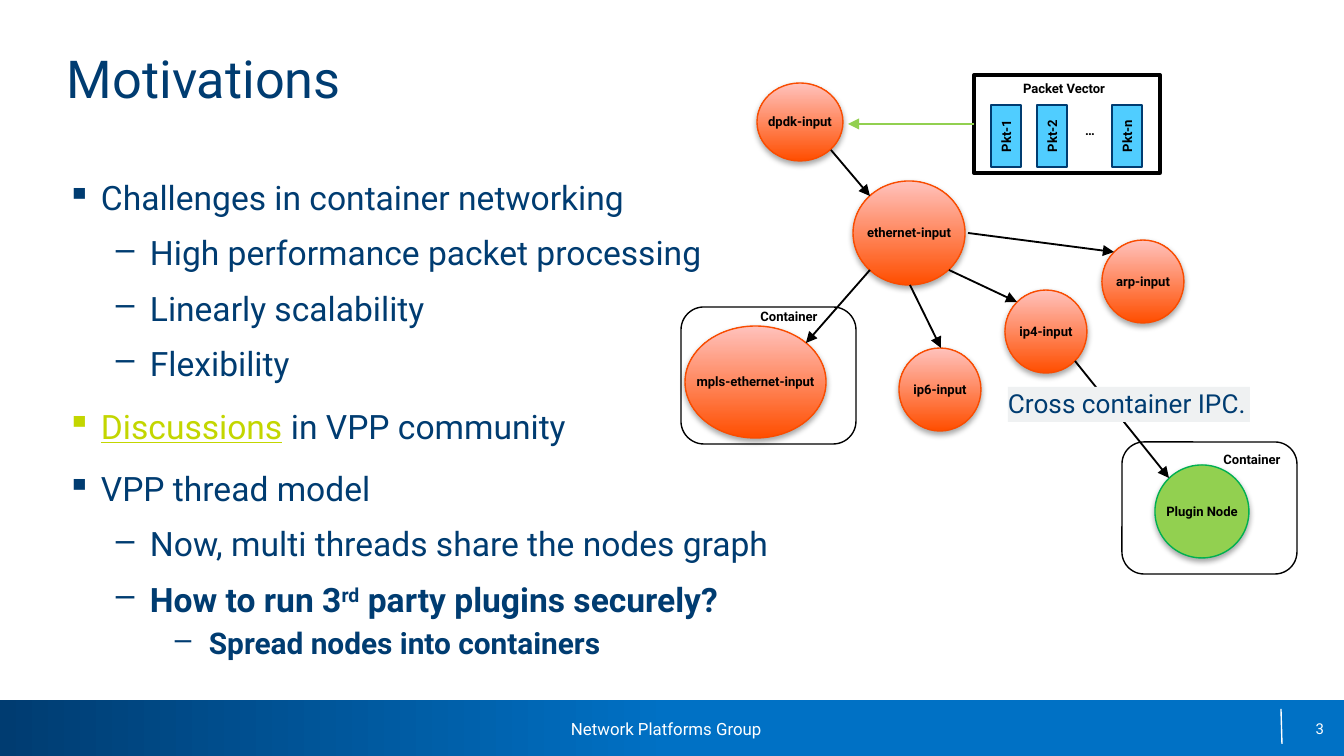
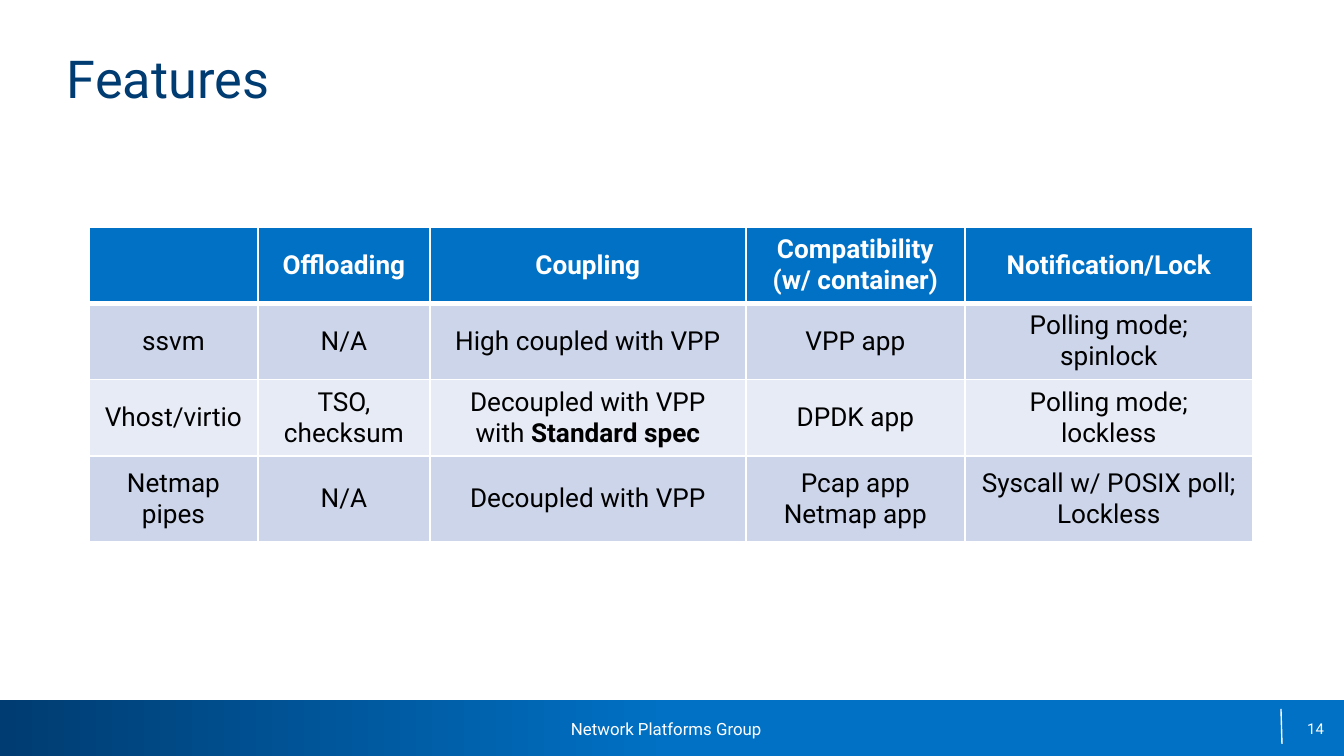
from pptx import Presentation
from pptx.dml.color import RGBColor
from pptx.enum.shapes import MSO_CONNECTOR, MSO_SHAPE
from pptx.enum.text import MSO_ANCHOR, MSO_AUTO_SIZE, PP_ALIGN
from pptx.oxml.ns import qn
from pptx.util import Emu, Pt
from lxml import etree

RECT, ROUND, OVAL = MSO_SHAPE.RECTANGLE, MSO_SHAPE.ROUNDED_RECTANGLE, MSO_SHAPE.OVAL
STRAIGHT = MSO_CONNECTOR.STRAIGHT
LEFT, CENTER, RIGHT = PP_ALIGN.LEFT, PP_ALIGN.CENTER, PP_ALIGN.RIGHT
TOP, MIDDLE = MSO_ANCHOR.TOP, MSO_ANCHOR.MIDDLE
GROW = MSO_AUTO_SIZE.SHAPE_TO_FIT_TEXT

SCALE = 914400 / 134.4
WIDE, HIGH = 1344, 756
NAVY, BLUE, WHITE, BLACK = "003C71", "0071C5", "FFFFFF", "000000"
LIME, GREEN, SKY, PALE = "C3D600", "92D050", "50CDFF", "EFF1F2"
BANDS = ["CCD5EA", "E7EBF5"]
FLAME = [(0, "FF4E00"), (1, "FFC2BD")]
FADE = [(0, NAVY), (0.5, BLUE)]


def style(size, hue, bold=False):
    return {"name": "Roboto", "size": Pt(size), "hue": hue, "bold": bold}


HEAD, BODY = style(28, NAVY), style(18, NAVY)
SMALL = style(7, BLACK, True)

# Bullet levels: indent in px, mark, space before in points
LEVELS = [(34, "▪", 12), (83, "–", 8), (142, "–", 3)]
HANG = 34
POINTS = [
    (0, "Challenges in container networking"),
    (1, "High performance packet processing"),
    (1, "Linearly scalability"),
    (1, "Flexibility"),
    (0, [("Discussions", {"hue": LIME, "underline": True}),
         (" in VPP community", {})]),
    (0, "VPP thread model"),
    (1, "Now, multi threads share the nodes graph"),
    (1, [("How to run 3", {"bold": True}),
         ("rd", {"bold": True, "base": 30000}),
         (" party plugins securely?", {"bold": True})]),
    (2, [("Spread nodes into containers", {"bold": True, "size": Pt(16)})]),
]

# Graph nodes: name, ellipse box, label width
NODES = [
    ("dpdk-input", (757, 83, 86, 78), 97),
    ("ethernet-input", (853, 181, 112, 104), 118),
    ("ip6-input", (899, 348, 82, 83), 85),
    ("ip4-input", (1005, 290, 82, 83), 85),
    ("arp-input", (1102, 240, 82, 83), 86),
    ("mpls-ethernet-input", (685, 326, 141, 112), 145),
]
EDGES = [
    (831, 150, 870, 196), (910, 285, 941, 348), (949, 270, 1017, 302),
    (968, 233, 1114, 252), (870, 270, 806, 343),
]

COLS = [169, 172, 316, 219, 288]
ROWS = [70, 70, 70, 86]
GRID = [
    ["", "Offloading", "Coupling", "Compatibility\n(w/ container)",
     "Notification/Lock"],
    ["ssvm", "N/A", "High coupled with VPP", "VPP app",
     "Polling mode;\nspinlock"],
    ["Vhost/virtio", "TSO,\nchecksum",
     [("Decoupled with VPP with ", {}), ("Standard spec", {"bold": True})],
     "DPDK app", "Polling mode;\nlockless"],
    ["Netmap pipes", "N/A", "Decoupled with VPP", "Pcap app\nNetmap app",
     "Syscall w/ POSIX poll;\nLockless"],
]


def px(num):
    return Emu(round(num * SCALE))


def box(nums):
    return [px(num) for num in nums]


def tone(code):
    return RGBColor.from_string(code)


def node(parent, tag, **attrs):
    return etree.SubElement(parent, qn(tag), attrs)


# Text
def dress(font, form):
    for key, val in form.items():
        if key == "hue":
            font.color.rgb = tone(val)
        elif key == "base":
            font._rPr.set("baseline", str(val))
        else:
            setattr(font, key, val)


def write(frame, lines, form, align=LEFT):
    for num, line in enumerate(lines):
        para = frame.add_paragraph() if num else frame.paragraphs[0]
        para.alignment = align
        runs = [(line, {})] if isinstance(line, str) else line
        for words, extra in runs:
            run = para.add_run()
            run.text = words
            dress(run.font, {**form, **extra})


def trim(frame, anchor=TOP):
    form = {"margin_left": 0, "margin_top": 0, "margin_right": 0,
            "margin_bottom": 0, "word_wrap": True, "vertical_anchor": anchor}
    for key, val in form.items():
        setattr(frame, key, val)


def text(slide, area, lines, form, align=LEFT, anchor=TOP):
    frame = slide.shapes.add_textbox(*box(area)).text_frame
    trim(frame, anchor)
    write(frame, lines, form, align)
    return frame


def label(slide, mid, top, width, words):
    area = (mid - width / 2, top, width, 30)
    frame = slide.shapes.add_textbox(*box(area)).text_frame
    frame.word_wrap = False
    frame.auto_size = GROW
    write(frame, [words], SMALL, CENTER)


def bullets(slide, area, points):
    frame = text(slide, area, [line for _, line in points], BODY)
    for num, (para, (level, _)) in enumerate(zip(frame.paragraphs, points)):
        indent, mark, gap = LEVELS[level]
        para.level = level
        props = para._p.get_or_add_pPr()
        props.set("marL", str(px(indent)))
        props.set("indent", str(-px(HANG)))
        node(props, "a:buChar", char=mark)
        if num:
            para.space_before = Pt(gap)


# Shapes
def shape(slide, kind, area, fill=None, line=None, width=0.75, angle=0):
    item = slide.shapes.add_shape(kind, *box(area))
    item.shadow.inherit = False
    if fill is None:
        item.fill.background()
    elif isinstance(fill, str):
        item.fill.solid()
        item.fill.fore_color.rgb = tone(fill)
    else:
        item.fill.gradient()
        item.fill.gradient_angle = angle
        for stop, (place, code) in zip(item.fill.gradient_stops, fill):
            stop.position = place
            stop.color.rgb = tone(code)
    if line:
        item.line.color.rgb = tone(line)
        item.line.width = Pt(width)
    else:
        item.line.fill.background()
    return item


def disc(slide, name, area, wide, fill=FLAME, line="F94C00"):
    item = shape(slide, OVAL, area, fill, line, angle=90)
    glow = item._element.spPr.find(qn("a:effectLst"))
    cast = node(glow, "a:outerShdw", blurRad="40000", dist="23000",
                dir="5400000", rotWithShape="0")
    shade = node(cast, "a:srgbClr", val=BLACK)
    node(shade, "a:alpha", val="35000")
    left, top, width, height = area
    label(slide, left + width / 2, top + height / 2 - 15, wide, name)


def link(slide, ends, hue=BLACK, width=1, arrow=True):
    item = slide.shapes.add_connector(STRAIGHT, *box(ends))
    item.line.color.rgb = tone(hue)
    item.line.width = Pt(width)
    props = item._element.spPr
    if arrow:
        node(props.find(qn("a:ln")), "a:tailEnd", type="triangle")
    node(props, "a:effectLst")
    return item


# Table
def edge(cell, sides):
    props = cell._tc.get_or_add_tcPr()
    for side, width in sides.items():
        line = node(props, "a:ln" + side, w=str(Pt(width)))
        node(node(line, "a:solidFill"), "a:srgbClr", val=WHITE)


def table(slide, left, top):
    area = (left, top, sum(COLS), sum(ROWS))
    grid = slide.shapes.add_table(len(ROWS), len(COLS), *box(area)).table
    for col, width in zip(grid.columns, COLS):
        col.width = px(width)
    for num, (row, height) in enumerate(zip(grid.rows, ROWS)):
        row.height = px(height)
        first = num == 0
        form = style(14, WHITE if first else BLACK, first)
        sides = {"L": 1, "R": 1, "T": 3 if num == 1 else 1,
                 "B": 3 if first else 1}
        for cell, words in zip(row.cells, GRID[num]):
            edge(cell, sides)
            cell.fill.solid()
            cell.fill.fore_color.rgb = tone(
                BLUE if first else BANDS[(num - 1) % 2])
            cell.vertical_anchor = MIDDLE
            lines = words.split("\n") if isinstance(words, str) else [words]
            write(cell.text_frame, lines, form, CENTER)


# Shared parts: footer band, page number, title
def page(deck, title, num):
    slide = deck.slides.add_slide(deck.slide_layouts[6])
    shape(slide, RECT, (0, 700, WIDE, 56), FADE)
    link(slide, (1281, 709, 1282, 744), WHITE, 0.75, False)
    text(slide, (571, 719, 199, 24), ["Network Platforms Group"],
         style(9, WHITE))
    text(slide, (1011, 709, 313, 40), [str(num)], style(8, WHITE),
         RIGHT, MIDDLE)
    text(slide, (67, 46, 1210, 128), [title], HEAD)
    return slide


def vector(slide):
    frame = shape(slide, RECT, (974, 75, 186, 98), WHITE, BLACK, 2)
    label(slide, 1064, 74, 113, "Packet Vector")
    for mid, name in [(1006, "Pkt-1"), (1052, "Pkt-2"), (1127, "Pkt-n")]:
        item = shape(slide, RECT, (mid - 31, 121, 62, 30), SKY, NAVY)
        item.rotation = 270
        trim(item.text_frame, MIDDLE)
        write(item.text_frame, [name], SMALL, CENTER)
    label(slide, 1090, 116, 38, "…")
    arrow = link(slide, (974, 124, 848, 124), GREEN, 1.5)
    arrow.begin_connect(frame, 1)


def graph(slide):
    for name, area, wide in NODES:
        disc(slide, name, area, wide)
    for ends in EDGES:
        link(slide, ends)
    vector(slide)
    disc(slide, "Plugin Node", (1155, 465, 94, 93), 103, GREEN, "00B050")
    link(slide, (1075, 361, 1169, 478))
    shape(slide, ROUND, (1122, 442, 175, 132), None, BLACK)
    label(slide, 1252, 445, 87, "Container")
    note = shape(slide, RECT, (1008, 387, 242, 35), PALE)
    trim(note.text_frame)
    write(note.text_frame, ["Cross container IPC."], style(14, NAVY))
    shape(slide, ROUND, (681, 307, 175, 137), None, BLACK)
    label(slide, 789, 302, 87, "Container")


def main():
    deck = Presentation()
    deck.slide_width, deck.slide_height = px(WIDE), px(HIGH)

    slide = page(deck, "Motivations", 3)
    bullets(slide, (67, 177, 1210, 504), POINTS)
    graph(slide)

    slide = page(deck, "Features", 14)
    table(slide, 89, 227)

    deck.save("out.pptx")


if __name__ == "__main__":
    main()
